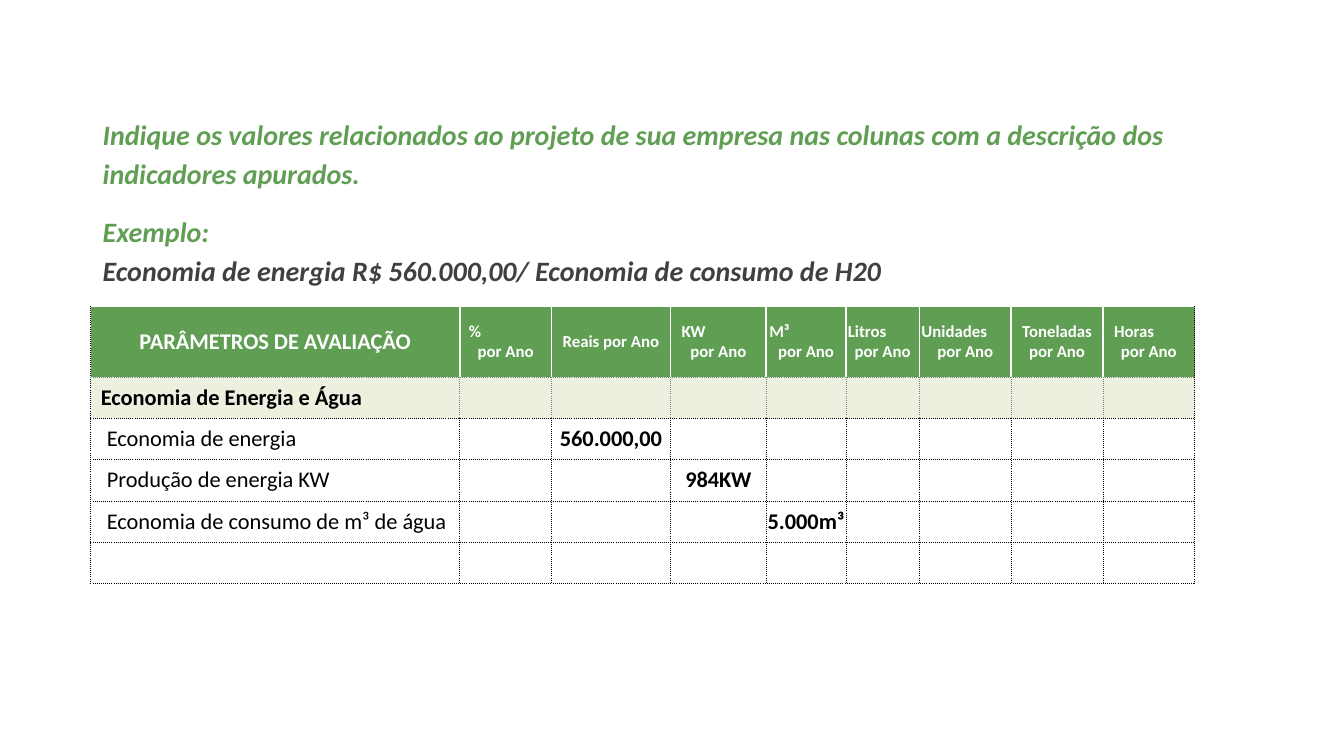
import pptx
import pptx.util
import pptx.dml.color
import pptx.enum.text
import pptx.oxml

Inches, Pt = pptx.util.Inches, pptx.util.Pt
PP_ALIGN = pptx.enum.text.PP_ALIGN
GREEN, PALE, WHITE, BLACK, GREY = "609E54", "EBF1DE", "FFFFFF", "000000", "808080"


def rgb(value):
    return pptx.dml.color.RGBColor.from_string(value)


def add_run(p, text, size, color, **fmt):
    r = p.add_run()
    r.text = text
    r.font.color.rgb = rgb(color)
    for name, value in dict(name="Calibri", size=Pt(size), bold=True, **fmt).items():
        setattr(r.font, name, value)


prs = pptx.Presentation()
prs.slide_width, prs.slide_height = Inches(13.33), Inches(7.5)
s = prs.slides.add_slide(prs.slide_layouts[6])

# Instructions
sp = s.shapes.add_textbox(Inches(0.92), Inches(1.07), Inches(10.79), Inches(1.81))
tf = sp.text_frame
tf.word_wrap = True
tf.auto_size = pptx.enum.text.MSO_AUTO_SIZE.SHAPE_TO_FIT_TEXT
intro = [
    [("Indique os valores relacionados ao projeto de sua empresa nas colunas "
      "com a descrição dos indicadores apurados.", GREEN)],
    [("Exemplo:", GREEN),
     ("Economia de energia R$ 560.000,00/ Economia de consumo de H20", "404040")],
]
for i, lines in enumerate(intro):
    p = tf.add_paragraph() if i else tf.paragraphs[0]
    p.line_spacing, p.space_after = 1.15, Pt(4)
    if i:
        p.space_before = Pt(10)
    for j, (text, color) in enumerate(lines):
        if j:
            p.add_line_break()
        add_run(p, text, 20, color, italic=True)

# Table grid
widths = [3.66, 0.91, 1.18, 0.95, 0.79, 0.73, 0.91, 0.91, 0.91]
heights = [0.7] + [0.41] * 5
last = len(widths) - 1
table = s.shapes.add_table(len(heights), len(widths), Inches(0.9), Inches(3.04),
                           Inches(sum(widths)), Inches(sum(heights))).table
table.first_row = table.horz_banding = False
for column, width in zip(table.columns, widths):
    column.width = Inches(width)
for row, height in zip(table.rows, heights):
    row.height = Inches(height)

# Cell borders and fills
for r, row in enumerate(table.rows):
    for c, cell in enumerate(row.cells):
        inner = {0: WHITE, 1: GREY}.get(r, BLACK)
        borders = {
            "L": inner if c > 0 else BLACK,
            "R": inner if c < last else BLACK,
            "T": inner,
            "B": GREY if r == 0 else BLACK,
        }
        tcPr = cell._tc.get_or_add_tcPr()
        for side, color in borders.items():
            width, dash = (1.5, "solid") if color == WHITE else (0.5, "sysDot")
            tcPr.append(pptx.oxml.parse_xml(
                f'<a:ln{side} xmlns:a="http://schemas.openxmlformats.org/drawingml/2006/main" '
                f'w="{Pt(width)}"><a:solidFill><a:srgbClr val="{color}"/></a:solidFill>'
                f'<a:prstDash val="{dash}"/></a:ln{side}>'))
        cell.fill.solid()
        cell.fill.fore_color.rgb = rgb({0: GREEN, 1: PALE}.get(r, WHITE))
        cell.vertical_anchor = pptx.enum.text.MSO_ANCHOR.MIDDLE
        cell.margin_left = cell.margin_right = cell.margin_top = cell.margin_bottom = 0

# Header: a unit pushed to the left by its own inset, above a centred "por Ano"
headers = [("PARÂMETROS DE AVALIAÇÃO", None), ("%", 0.09), ("Reais por Ano", None),
           ("KW", 0.11), ("M³", 0.03), ("Litros", 0.02), ("Unidades", 0.02),
           ("Toneladas por Ano", None), ("Horas", 0.11)]
for c, (text, inset) in enumerate(headers):
    cell = table.cell(0, c)
    p = cell.text_frame.paragraphs[0]
    p.alignment = PP_ALIGN.CENTER
    if inset is not None:
        p.alignment = PP_ALIGN.LEFT
        p._p.get_or_add_pPr().set("marL", str(Inches(inset)))
    add_run(p, text, 12 if c else 16, WHITE)
    if inset is not None:
        p = cell.text_frame.add_paragraph()
        p.alignment = PP_ALIGN.CENTER
        add_run(p, "por Ano", 12, WHITE)

# Row labels
labels = ["Economia de Energia e Água", "Economia de energia",
          "Produção de energia KW", "Economia de consumo de m³ de água"]
for r, text in enumerate(labels, 1):
    cell = table.cell(r, 0)
    cell.margin_left = Inches(0.1 if r == 1 else 0.16)
    p = cell.text_frame.paragraphs[0]
    add_run(p, text, 16, BLACK)
    p.runs[0].font.bold = r == 1

# Example values run down the diagonal
for i, text in enumerate(["560.000,00\u00a0", "984KW", "5.000m³"], 2):
    p = table.cell(i, i).text_frame.paragraphs[0]
    p.alignment = PP_ALIGN.CENTER
    add_run(p, text.strip(), 16, BLACK)

prs.save("out.pptx")
